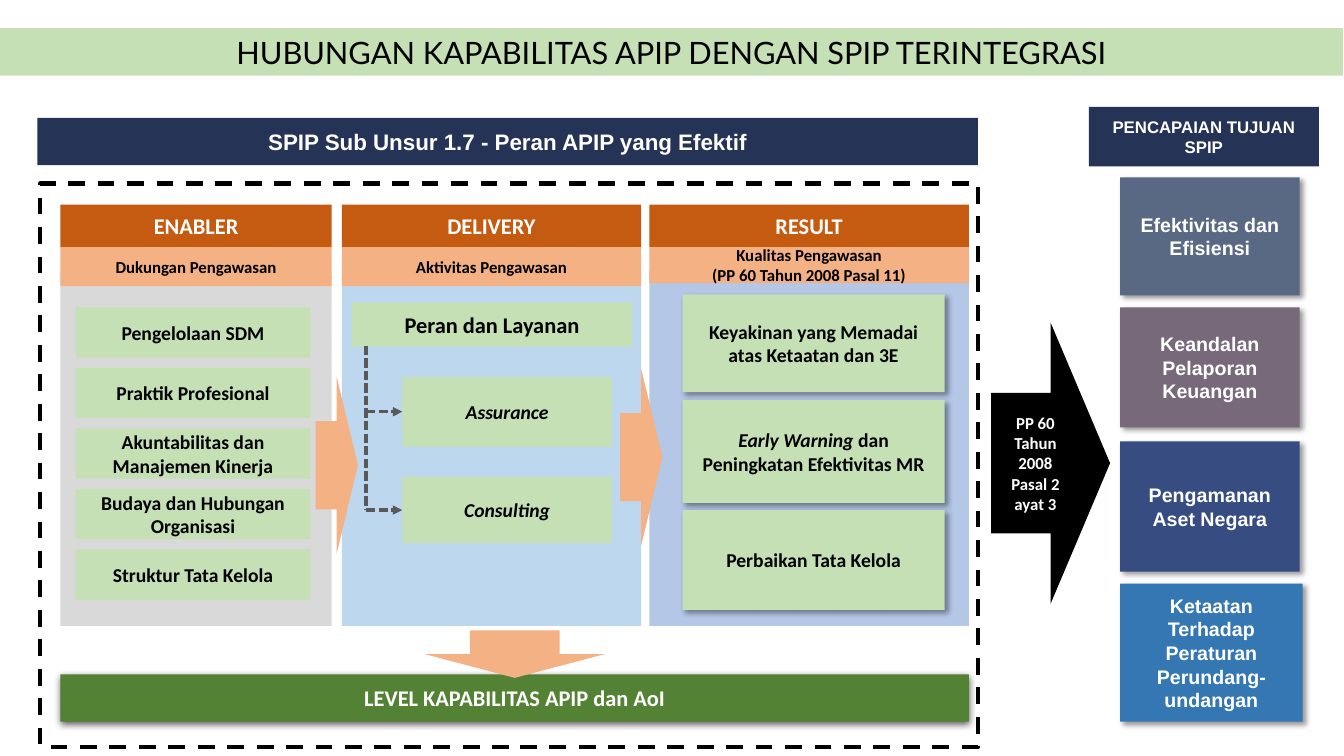
from dataclasses import dataclass
from typing import NamedTuple, Optional

from lxml import etree
from pptx import Presentation
from pptx import util as u
from pptx.dml.color import RGBColor
from pptx.enum import dml, shapes, text
from pptx.oxml import ns

WHITE = RGBColor(0xFF, 0xFF, 0xFF)
BLACK = RGBColor(0x00, 0x00, 0x00)
GRAY = RGBColor(0x59, 0x59, 0x59)
NAVY = RGBColor(0x25, 0x33, 0x56)
RUST = RGBColor(0xC5, 0x5A, 0x11)
PEACH = RGBColor(0xF4, 0xB1, 0x83)
LIGHT_GREEN = RGBColor(0xC5, 0xE0, 0xB4)
DARK_GREEN = RGBColor(0x54, 0x82, 0x35)
PANEL_GRAY = RGBColor(0xD9, 0xD9, 0xD9)
PANEL_BLUE = RGBColor(0xBD, 0xD7, 0xEE)
PANEL_INDIGO = RGBColor(0xB4, 0xC7, 0xE7)
SLATE = RGBColor(0x59, 0x69, 0x84)
MAUVE = RGBColor(0x77, 0x69, 0x7A)
INDIGO = RGBColor(0x37, 0x4C, 0x81)
BLUE = RGBColor(0x34, 0x77, 0xB2)


class Run(NamedTuple):
    text: str
    italic: bool = False


class Style(NamedTuple):
    size: int
    font: str = "Calibri"
    color: RGBColor = BLACK
    bold: bool = True


class Shadow(NamedTuple):
    opacity: int
    blur: float
    distance: float
    angle: int


@dataclass
class Box:
    left: float
    top: float
    width: float
    height: float
    fill: Optional[RGBColor]
    lines: tuple[tuple[Run, ...], ...] = ()
    style: Style = Style(14)
    shadow: Optional[Shadow] = None
    kind: shapes.MSO_SHAPE = shapes.MSO_SHAPE.RECTANGLE
    rotation: int = 0


CARD_SHADOW = Shadow(40, 4, 3, 45)
BAR_SHADOW = Shadow(63, 5, 1.5, 90)
HEADING = Style(16, color=WHITE)
SUBHEADING = Style(12)
GOAL = Style(14, "Arial", WHITE)


def plain(*lines: str, italic: bool = False) -> tuple[tuple[Run, ...], ...]:
    return tuple((Run(line, italic),) for line in lines)


def write(frame, lines, style: Style) -> None:
    """Fill a text frame with centred paragraphs."""
    frame.word_wrap = True
    frame.auto_size = text.MSO_AUTO_SIZE.NONE
    frame.vertical_anchor = text.MSO_ANCHOR.MIDDLE
    frame.margin_left = frame.margin_right = u.Inches(0.1)
    frame.margin_top = frame.margin_bottom = 0
    for index, line in enumerate(lines):
        paragraph = frame.add_paragraph() if index else frame.paragraphs[0]
        paragraph.alignment = text.PP_ALIGN.CENTER
        for part in line:
            run = paragraph.add_run()
            run.text = part.text
            run.font.size = u.Pt(style.size)
            run.font.name = style.font
            run.font.bold = style.bold
            run.font.italic = part.italic
            run.font.color.rgb = style.color


def add_shadow(shape, shadow: Shadow) -> None:
    effects = shape._element.spPr.find(ns.qn("a:effectLst"))
    outer = etree.SubElement(
        effects, ns.qn("a:outerShdw"), blurRad=str(u.Pt(shadow.blur)),
        dist=str(u.Pt(shadow.distance)), dir=str(shadow.angle * 60000),
        algn="ctr", rotWithShape="0")
    color = etree.SubElement(outer, ns.qn("a:srgbClr"), val=str(BLACK))
    etree.SubElement(color, ns.qn("a:alpha"), val=str(shadow.opacity * 1000))


def draw_box(slide, box: Box):
    shape = slide.shapes.add_shape(
        box.kind, u.Inches(box.left), u.Inches(box.top),
        u.Inches(box.width), u.Inches(box.height))
    shape.shadow.inherit = False
    shape.rotation = box.rotation
    shape.line.fill.background()
    if box.fill is None:
        shape.fill.background()
    else:
        shape.fill.solid()
        shape.fill.fore_color.rgb = box.fill
    if box.shadow:
        add_shadow(shape, box.shadow)
    if box.lines:
        write(shape.text_frame, box.lines, box.style)
    return shape


def draw_dashes(slide, start: tuple[float, float], end: tuple[float, float], target=None) -> None:
    """Draw a dashed line; with a target it ends in an arrow at its left side."""
    line = slide.shapes.add_connector(
        shapes.MSO_CONNECTOR.STRAIGHT, *map(u.Inches, start + end))
    line.line.color.rgb = GRAY
    line.line.width = u.Pt(2.25)
    line.line.dash_style = dml.MSO_LINE.SQUARE_DOT
    etree.SubElement(line._element.spPr, ns.qn("a:effectLst"))
    if target is not None:
        etree.SubElement(line.line._get_or_add_ln(), ns.qn("a:tailEnd"), type="triangle")
        line.end_connect(target, 1)


def arrow(left: float, top: float, width: float, height: float,
          fill: RGBColor = PEACH, rotation: int = 0) -> Box:
    return Box(left, top, width, height, fill,
               kind=shapes.MSO_SHAPE.RIGHT_ARROW, rotation=rotation)


def main() -> None:
    presentation = Presentation()
    presentation.slide_width = u.Inches(13.33)
    presentation.slide_height = u.Inches(7.5)
    slide = presentation.slides.add_slide(presentation.slide_layouts[5])

    # Title band
    title = slide.shapes.title
    title.left, title.top = 0, u.Inches(0.28)
    title.width, title.height = u.Inches(13.32), u.Inches(0.47)
    title.fill.solid()
    title.fill.fore_color.rgb = LIGHT_GREEN
    write(title.text_frame, plain("HUBUNGAN KAPABILITAS APIP DENGAN SPIP TERINTEGRASI"),
          Style(22, "Lato", bold=False))

    # Dashed frame and its heading
    frame = draw_box(slide, Box(0.4, 1.82, 9.3, 5.59, None))
    frame.line.color.rgb = BLACK
    frame.line.width = u.Pt(3)
    frame.line.dash_style = dml.MSO_LINE.DASH
    draw_box(slide, Box(0.37, 1.17, 9.33, 0.47, NAVY,
                        plain("SPIP Sub Unsur 1.7 - Peran APIP yang Efektif"),
                        Style(16, "Arial", WHITE)))

    # Three columns: panel, subheading, heading
    columns = [
        (0.6, 2.69, PANEL_GRAY, 0.39, "ENABLER", ("Dukungan Pengawasan",)),
        (3.39, 2.97, PANEL_BLUE, 0.39, "DELIVERY", ("Aktivitas Pengawasan",)),
        (6.44, 3.17, PANEL_INDIGO, 0.36, "RESULT",
         ("Kualitas Pengawasan", "(PP 60 Tahun 2008 Pasal 11)")),
    ]
    for left, width, fill, height, heading, subheading in columns:
        draw_box(slide, Box(left, 2.69, width, 3.52, fill))
        draw_box(slide, Box(left, 2.45, width, height, PEACH, plain(*subheading), SUBHEADING))
        draw_box(slide, Box(left, 2.03, width, 0.42, RUST, plain(heading), HEADING))

    # Enabler items
    enablers = ["Pengelolaan SDM", "Praktik Profesional", "Akuntabilitas dan Manajemen Kinerja",
                "Budaya dan Hubungan Organisasi", "Struktur Tata Kelola"]
    for index, name in enumerate(enablers):
        draw_box(slide, Box(0.75, 3.05 + 0.6 * index, 2.33, 0.5, LIGHT_GREEN, plain(name)))

    # Delivery roles, joined by a dashed tree
    draw_box(slide, Box(3.49, 3, 2.78, 0.44, LIGHT_GREEN, plain("Peran dan Layanan"), Style(16)))
    trunk = 3.63
    draw_dashes(slide, (trunk, 3.43), (trunk, 5.06))
    for name, top, height in [("Assurance", 3.74, 0.69), ("Consulting", 4.73, 0.66)]:
        role = draw_box(slide, Box(3.99, top, 2.08, height, LIGHT_GREEN, plain(name, italic=True)))
        middle = top + height / 2
        draw_dashes(slide, (trunk, middle), (3.99, middle), role)

    # Result cards
    results = [
        (2.92, 0.97, plain("Keyakinan yang Memadai atas Ketaatan dan 3E")),
        (3.97, 1.02, ((Run("Early Warning ", True), Run("dan Peningkatan Efektivitas MR")),)),
        (5.06, 0.99, plain("Perbaikan Tata Kelola")),
    ]
    for top, height, lines in results:
        draw_box(slide, Box(6.77, top, 2.6, height, LIGHT_GREEN, lines, shadow=CARD_SHADOW))

    # Capability level bar and flow arrows
    draw_box(slide, Box(0.6, 6.69, 9.01, 0.47, DARK_GREEN,
                        plain("LEVEL KAPABILITAS APIP dan AoI"), HEADING, BAR_SHADOW))
    for flow in [arrow(3.13, 3.74, 0.42, 1.75), arrow(6.15, 3.66, 0.42, 1.75),
                 arrow(4.87, 5.6, 0.47, 1.78, rotation=90),
                 arrow(9.83, 3.2, 1.18, 2.79, BLACK)]:
        draw_box(slide, flow)
    label = slide.shapes.add_textbox(u.Inches(9.88), u.Inches(4.04), u.Inches(0.78), u.Inches(1.11))
    write(label.text_frame, plain("PP 60 Tahun 2008", "Pasal 2 ayat 3"), Style(12, color=WHITE))
    label.text_frame.margin_left = label.text_frame.margin_right = u.Inches(0.05)

    # SPIP goals
    draw_box(slide, Box(10.8, 1.06, 2.28, 0.59, NAVY, plain("PENCAPAIAN TUJUAN SPIP"),
                        Style(12, "Arial", WHITE)))
    goals = [
        (1.76, 1.78, 1.17, SLATE, "Efektivitas dan Efisiensi"),
        (3.05, 1.78, 1.19, MAUVE, "Keandalan Pelaporan Keuangan"),
        (4.38, 1.78, 1.29, INDIGO, "Pengamanan Aset Negara"),
        (5.79, 1.81, 1.37, BLUE, "Ketaatan Terhadap Peraturan Perundang-undangan"),
    ]
    for top, width, height, fill, name in goals:
        draw_box(slide, Box(11.11, top, width, height, fill, plain(name), GOAL, CARD_SHADOW))

    presentation.save("out.pptx")


if __name__ == "__main__":
    main()
